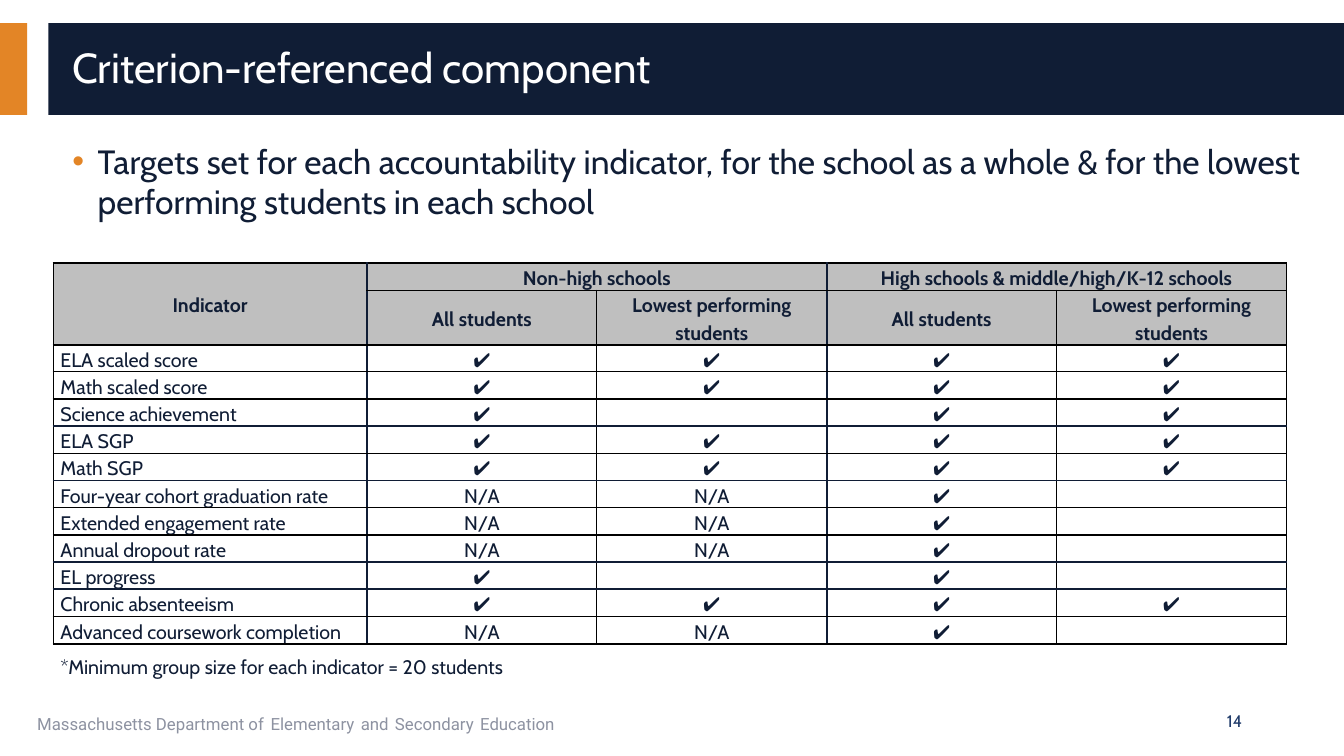
import pptx
import pptx.util
import pptx.dml.color
import pptx.enum.shapes
import pptx.enum.text
import pptx.oxml.xmlchemy
from lxml import etree
from pptx.oxml.ns import qn

Inches = pptx.util.Inches
ALIGN = pptx.enum.text.PP_ALIGN
ANCHOR = pptx.enum.text.MSO_ANCHOR

# Content
TITLE = "Criterion-referenced component"
BULLET = ("Targets set for each accountability indicator, for the school as a whole "
          "& for the lowest performing students in each school")
FOOTNOTE = "*Minimum group size for each indicator = 20 students"
AGENCY = ["Massachusetts Department of", "Elementary", "and", "Secondary", "Education"]
PAGE_NUMBER = "14"
YES, NA, NONE = "✔", "N/A", ""
HEADER = [
    ("Indicator", "Non-high schools", "", "High schools & middle/high/K-12 schools", ""),
    ("",) + ("All students", "Lowest performing students") * 2,
]
INDICATORS = [
    ("ELA scaled score", YES, YES, YES, YES),
    ("Math scaled score", YES, YES, YES, YES),
    ("Science achievement", YES, NONE, YES, YES),
    ("ELA SGP", YES, YES, YES, YES),
    ("Math SGP", YES, YES, YES, YES),
    ("Four-year cohort graduation rate", NA, NA, YES, NONE),
    ("Extended engagement rate", NA, NA, YES, NONE),
    ("Annual dropout rate", NA, NA, YES, NONE),
    ("EL progress", YES, NONE, YES, NONE),
    ("Chronic absenteeism", YES, YES, YES, YES),
    ("Advanced coursework completion", NA, NA, YES, NONE),
]
MERGES = [((0, 0), (1, 0)), ((0, 1), (0, 2)), ((0, 3), (0, 4))]

# Theme
THEME = {
    "navy": "101D35", "orange": "E38526", "white": "FFFFFF", "gray": "BFBFBF",
    "black": "000000", "blue": "203B6A", "muted": "8D92A1",
    "font": "Cabin", "footer_font": "Roboto",
    "title": 30, "body": 24, "table": 14, "small": 12, "gap": 18,
}
THIN, THICK, DIVIDER = ("black", 1), ("black", 1.5), ("navy", 1.5)

# Table rules, from left to right and from top to bottom
COLUMN_LINES = [THICK, DIVIDER, THIN, DIVIDER, THIN, THICK]
ROW_LINES = [THICK, THIN, THICK, THIN, THIN, DIVIDER, THIN, DIVIDER,
             THIN, THIN, DIVIDER, DIVIDER, THIN, THICK]
COLUMN_WIDTHS = [3.11] + [2.28] * 4
ROW_HEIGHTS = [0.27, 0.54] + [0.27] * len(INDICATORS)
PLAIN_TABLE = "{2D5ABB26-0587-4C30-8999-92F81FD0307C}"


def color(name):
    return pptx.dml.color.RGBColor.from_string(THEME[name])


def apply(target, values):
    for name, value in values.items():
        setattr(target, name, value)


def add_span(para, text, size, tint, font="font", bold=False):
    span = para.add_run()
    span.text = text
    apply(span.font, {"name": THEME[font], "size": pptx.util.Pt(THEME[size]), "bold": bold})
    span.font.color.rgb = color(tint)


def add_bar(page, *place):
    *frame, tint = place
    bar = page.shapes.add_shape(pptx.enum.shapes.MSO_SHAPE.RECTANGLE, *map(Inches, frame))
    bar.shadow.inherit = False
    bar.fill.solid()
    bar.fill.fore_color.rgb = color(tint)
    bar.line.fill.background()


def add_box(page, frame, anchor=ANCHOR.TOP, **para_format):
    box = page.shapes.add_textbox(*map(Inches, frame))
    apply(box.text_frame, {"word_wrap": True, "vertical_anchor": anchor})
    para = box.text_frame.paragraphs[0]
    apply(para, para_format)
    return para


def add_bullet(para):
    props = para._p.get_or_add_pPr()
    for name, sign in (("marL", 1), ("indent", -1)):
        props.set(name, str(sign * Inches(0.25)))
    tint = etree.SubElement(props, qn("a:buClr"))
    etree.SubElement(tint, qn("a:srgbClr"), val=THEME["orange"])
    etree.SubElement(props, qn("a:buFont"), typeface="Arial")
    etree.SubElement(props, qn("a:buChar"), char="•")


def add_borders(cell, edges):
    props = cell._tc.get_or_add_tcPr()
    for side, (tint, width) in edges.items():
        line = etree.SubElement(props, qn("a:ln" + side), w=str(pptx.util.Pt(width)))
        fill = etree.SubElement(line, qn("a:solidFill"))
        etree.SubElement(fill, qn("a:srgbClr"), val=THEME[tint])


def fill_cell(cell, text, row, column):
    heading = row < len(HEADER)
    add_borders(cell, {
        "L": COLUMN_LINES[column], "R": COLUMN_LINES[column + cell.span_width],
        "T": ROW_LINES[row], "B": ROW_LINES[row + cell.span_height],
    })
    apply(cell, {"vertical_anchor": ANCHOR.MIDDLE, "margin_top": 0, "margin_bottom": 0,
                 "margin_left": Inches(0.07), "margin_right": Inches(0.07)})
    if heading:
        cell.fill.solid()
        cell.fill.fore_color.rgb = color("gray")
    else:
        cell.fill.background()
    para = cell.text_frame.paragraphs[0]
    apply(para, {"line_spacing": 1.15,
                 "alignment": ALIGN.CENTER if heading or column else ALIGN.LEFT})
    if text:
        add_span(para, text, "table", "navy", bold=heading)
    else:
        etree.SubElement(para._p, qn("a:endParaRPr"), sz=str(THEME["table"] * 100))


def add_indicator_table(page):
    rows = HEADER + INDICATORS
    frame = page.shapes.add_table(
        len(rows), len(COLUMN_WIDTHS), Inches(0.53), Inches(2.61),
        Inches(sum(COLUMN_WIDTHS)), Inches(sum(ROW_HEIGHTS)))
    table = frame.table
    apply(table, {"first_row": False, "horz_banding": False})
    table._tbl.tblPr.find(qn("a:tableStyleId")).text = PLAIN_TABLE
    for column, width in zip(table.columns, COLUMN_WIDTHS):
        column.width = Inches(width)
    for row, height in zip(table.rows, ROW_HEIGHTS):
        row.height = Inches(height)
    for first, last in MERGES:
        table.cell(*first).merge(table.cell(*last))
    for row, texts in enumerate(rows):
        for column, text in enumerate(texts):
            cell = table.cell(row, column)
            if not cell.is_spanned:
                fill_cell(cell, text, row, column)


def main():
    deck = pptx.Presentation()
    apply(deck, {"slide_width": Inches(13.33), "slide_height": Inches(7.5)})
    page = deck.slides.add_slide(deck.slide_layouts[6])

    # Title band
    add_bar(page, 0, 0.23, 0.27, 0.91, "orange")
    add_bar(page, 0.48, 0.23, 12.85, 0.91, "navy")
    para = add_box(page, (0.62, 0.32, 12.44, 0.74), ANCHOR.MIDDLE, line_spacing=0.9)
    add_span(para, TITLE, "title", "white")

    # Bullet
    para = add_box(page, (0.62, 1.35, 12.44, 1.38))
    add_bullet(para)
    add_span(para, BULLET, "body", "navy")

    # Table and its note
    add_indicator_table(page)
    para = add_box(page, (0.5, 6.45, 10.1, 0.34))
    add_span(para, FOOTNOTE, "table", "navy")

    # Footer, with wider spaces between its parts
    para = add_box(page, (0.27, 6.95, 8.44, 0.4))
    for index, words in enumerate(AGENCY):
        if index:
            add_span(para, " ", "gap", "blue", "footer_font")
        add_span(para, words, "small", "muted", "footer_font")
    para = add_box(page, (9.42, 6.95, 3, 0.4), ANCHOR.MIDDLE, alignment=ALIGN.RIGHT)
    add_span(para, PAGE_NUMBER, "small", "blue")

    deck.save("out.pptx")


if __name__ == "__main__":
    main()
